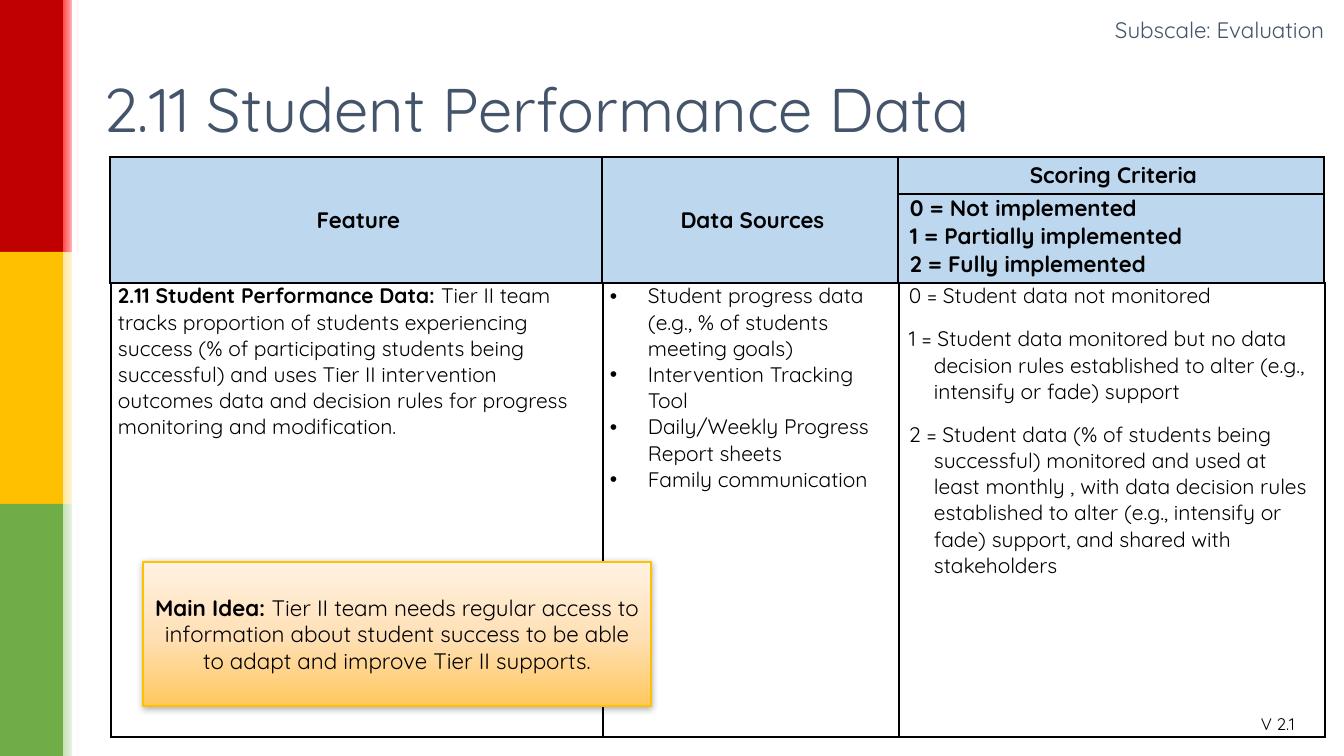
from lxml import etree
from pptx import Presentation
from pptx.dml.color import RGBColor
from pptx.enum.shapes import MSO_SHAPE
from pptx.enum.text import MSO_ANCHOR, MSO_AUTO_SIZE, PP_ALIGN
from pptx.oxml.ns import qn
from pptx.util import Emu, Pt

RECTANGLE = MSO_SHAPE.RECTANGLE
TOP, MIDDLE = MSO_ANCHOR.TOP, MSO_ANCHOR.MIDDLE
LEFT, CENTER, RIGHT = PP_ALIGN.LEFT, PP_ALIGN.CENTER, PP_ALIGN.RIGHT
NO_FIT = MSO_AUTO_SIZE.NONE
TITLE_ONLY = 5

FONT = "Quicksand"
BLACK, WHITE, SLATE = "000000", "FFFFFF", "44546A"
HEADER_BLUE, GOLD = "BDD7EE", "FFC000"


def px(value):
    return Emu(round(value * 914400 / 100.8))


def rgb(value):
    return RGBColor.from_string(value)


def add_xml(parent, tag, **attributes):
    node = etree.SubElement(parent, qn(tag))
    for name, value in attributes.items():
        node.set(name, str(value))
    return node


class SlideBuilder:
    def __init__(self, deck):
        self.slide = deck.slides.add_slide(deck.slide_layouts[TITLE_ONLY])
        self.shapes = self.slide.shapes

    def add_text(self, frame, paragraphs, size, color=BLACK, align=LEFT,
                 indent=None, bullet=None, after=0):
        """Each paragraph is a list of (text, bold) runs."""
        for index, runs in enumerate(paragraphs):
            para = frame.paragraphs[0] if index == 0 else frame.add_paragraph()
            para.alignment = align
            para.space_after = Pt(after)
            properties = para._p.get_or_add_pPr()
            if indent:
                margin, first_line = indent
                properties.set("marL", str(px(margin)))
                properties.set("indent", str(px(first_line)))
            if bullet:
                add_xml(properties, "a:buFont", typeface="Arial")
                add_xml(properties, "a:buChar", char=bullet)
            for text, bold in runs:
                span = para.add_run()
                span.text = text
                span.font.name = FONT
                span.font.size = Pt(size)
                span.font.bold = bold
                span.font.color.rgb = rgb(color)

    def title(self, box, text):
        title = self.shapes.title
        title.left, title.top, title.width, title.height = map(px, box)
        frame = title.text_frame
        frame.auto_size = NO_FIT
        frame.vertical_anchor = MIDDLE
        self.add_text(frame, [[(text, False)]], 44, SLATE)
        frame.paragraphs[0].line_spacing = 0.9

    def label(self, box, text, size, color, align=LEFT):
        frame = self.shapes.add_textbox(*map(px, box)).text_frame
        frame.word_wrap = True
        self.add_text(frame, [[(text, False)]], size, color, align)

    def rectangle(self, box, fill):
        shape = self.shapes.add_shape(RECTANGLE, *map(px, box))
        shape.shadow.inherit = False
        shape.fill.solid()
        shape.fill.fore_color.rgb = rgb(fill)
        shape.line.fill.background()
        return shape

    def gradient_rectangle(self, box, stops, angle):
        shape = self.rectangle(box, WHITE)
        solid = shape._element.spPr.find(qn("a:solidFill"))
        gradient = etree.Element(qn("a:gradFill"), rotWithShape="1")
        stop_list = add_xml(gradient, "a:gsLst")
        for position, color in stops:
            stop = add_xml(stop_list, "a:gs", pos=position * 1000)
            add_xml(stop, "a:srgbClr", val=color)
        add_xml(gradient, "a:lin", ang=angle * 60000, scaled=0)
        solid.getparent().replace(solid, gradient)
        return shape

    def callout(self, box, stops, runs):
        shape = self.gradient_rectangle(box, stops, 270)
        shape.line.color.rgb = rgb(GOLD)
        shape.line.width = Pt(1)
        effects = shape._element.spPr.find(qn("a:effectLst"))
        shadow = add_xml(effects, "a:outerShdw", blurRad=Pt(5), dist=Pt(1),
                         dir=90 * 60000, rotWithShape=0)
        add_xml(add_xml(shadow, "a:srgbClr", val=BLACK), "a:alpha", val=32000)
        frame = shape.text_frame
        frame.word_wrap = True
        frame.vertical_anchor = MIDDLE
        self.add_text(frame, [runs], 16, align=CENTER)

    def table(self, left, top, columns, rows, border, fill=None):
        table = self.shapes.add_table(
            len(rows), len(columns), px(left), px(top),
            px(sum(columns)), px(sum(rows))).table
        table.first_row = table.horz_banding = False
        for column, width in zip(table.columns, columns):
            column.width = px(width)
        for row, height in zip(table.rows, rows):
            row.height = px(height)
        for cell in table.iter_cells():
            cell.margin_left = cell.margin_right = px(7)
            cell.margin_top = cell.margin_bottom = 0
            if fill:
                cell.fill.solid()
                cell.fill.fore_color.rgb = rgb(fill)
            else:
                cell.fill.background()
            self.border(cell, border)
        return table

    def border(self, cell, width):
        properties = cell._tc.get_or_add_tcPr()
        for index, side in enumerate(("a:lnL", "a:lnR", "a:lnT", "a:lnB")):
            line = etree.Element(qn(side), w=str(Pt(width)))
            add_xml(add_xml(line, "a:solidFill"), "a:srgbClr", val=BLACK)
            properties.insert(index, line)

    def cell(self, cell, paragraphs, size, anchor=TOP, **style):
        cell.vertical_anchor = anchor
        self.add_text(cell.text_frame, paragraphs, size, **style)


def plain(*lines, bold=False):
    return [[(line, bold)] for line in lines]


def main():
    deck = Presentation()
    deck.slide_width, deck.slide_height = px(1344), px(756)
    page = SlideBuilder(deck)

    # Traffic-light bands with a fading edge
    bands = [("C00000", "FF4747"), (GOLD, "FFE699"), ("70AD47", "C5E0B4")]
    for index, (color, glow) in enumerate(bands):
        top = index * 252
        page.rectangle((0, top, 63, 252), color)
        page.gradient_rectangle((63, top, 16, 252), [(0, glow), (100, WHITE)], 0)
    page.rectangle((72, 0, 5, 756), WHITE)

    # Version and title
    page.label((1251, 709, 93, 30), "V 2.1", 12, BLACK)
    page.title((93, 40, 1252, 146), "2.11 Student Performance Data")

    # Header table
    columns = [492, 296, 426]
    header = page.table(110, 157, columns, [37, 89], 1.5, HEADER_BLUE)
    for index, heading in enumerate(("Feature", "Data Sources", "Scoring Criteria")):
        if index < 2:
            header.cell(0, index).merge(header.cell(1, index))
        page.cell(header.cell(0, index), plain(heading, bold=True), 16,
                  MIDDLE, align=CENTER, indent=(36, -31))
    scores = plain("0 = Not implemented", "1 = Partially implemented",
                   "2 = Fully implemented", bold=True)
    page.cell(header.cell(1, 2), scores, 16, indent=(36, -31))

    # Detail table
    detail = page.table(111, 283, columns, [454], 1)
    feature = [("2.11 Student Performance Data: ", True),
               ("Tier II team tracks proportion of students experiencing success "
                "(% of participating students being successful) and uses Tier II "
                "intervention outcomes data and decision rules for progress "
                "monitoring and modification.", False)]
    page.cell(detail.cell(0, 0), [feature], 15)
    sources = plain("Student progress data (e.g., % of students meeting goals)",
                    "Intervention Tracking Tool",
                    "Daily/Weekly Progress Report sheets",
                    "Family communication")
    page.cell(detail.cell(0, 1), sources, 15, indent=(38, -38), bullet="•")
    criteria = plain(
        "0 = Student data not monitored",
        "1 = Student data monitored but no data decision rules established to "
        "alter (e.g., intensify or fade) support",
        "2 = Student data (% of students being successful) monitored and used at "
        "least monthly , with data decision rules established to alter (e.g., "
        "intensify or fade) support, and shared with stakeholders")
    page.cell(detail.cell(0, 2), criteria, 15, indent=(28, -25), after=12)

    # Main idea and subscale label
    page.callout((143, 562, 508, 144),
                 [(0, "FFC75E"), (48, "FFE0B6"), (100, "FFF2E2")],
                 [("Main Idea: ", True),
                  ("Tier II team needs regular access to information about student "
                   "success to be able to adapt and improve Tier II supports.", False)])
    page.label((932, 11, 402, 37), "Subscale: Evaluation", 16, SLATE, RIGHT)

    deck.save("out.pptx")


if __name__ == "__main__":
    main()
